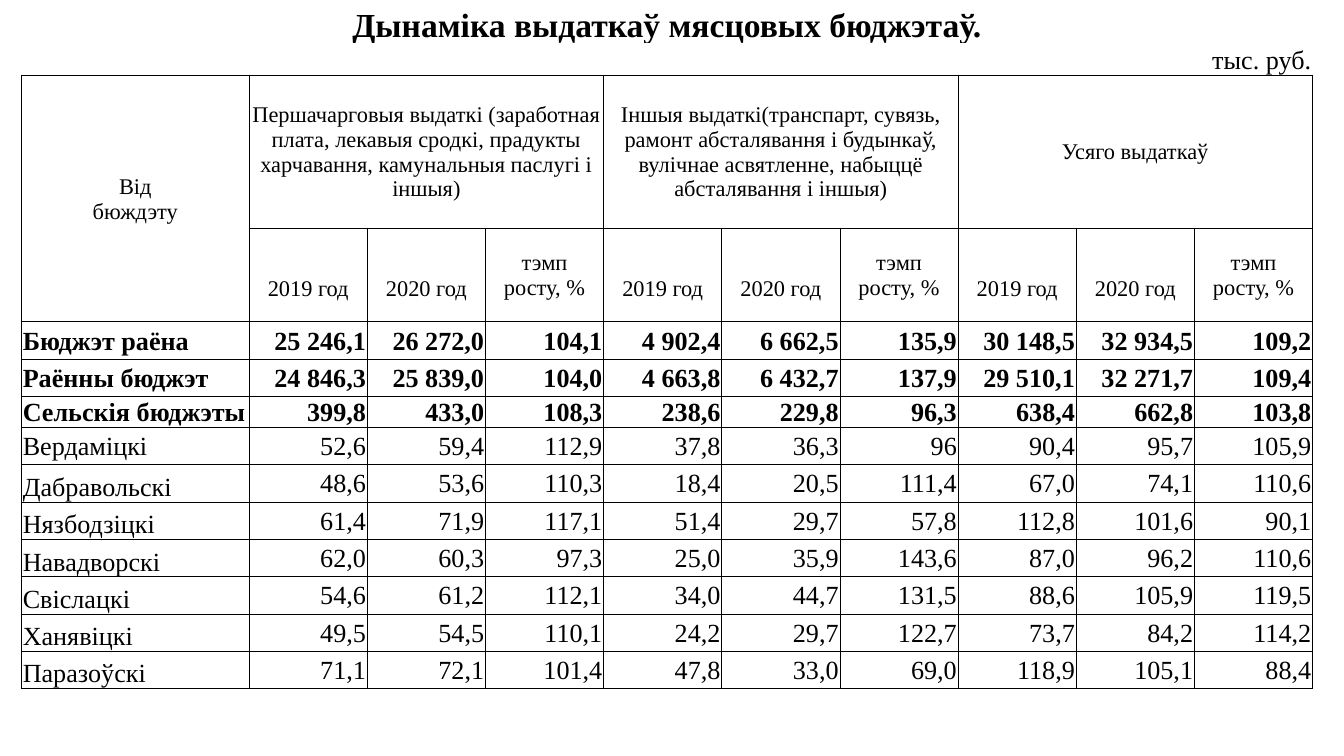
from lxml.etree import SubElement
from pptx import Presentation
from pptx.dml.color import RGBColor
from pptx.enum.text import MSO_ANCHOR, PP_ALIGN
from pptx.oxml.ns import qn
from pptx.util import Pt

INK = "000000"
LEFT, CENTER, RIGHT = PP_ALIGN.LEFT, PP_ALIGN.CENTER, PP_ALIGN.RIGHT

TITLE = "Дынаміка выдаткаў мясцовых бюджэтаў."
UNIT = "тыс. руб."
GROUPS = [
    "Першачарговыя выдаткі (заработная плата, лекавыя сродкі, прадукты "
    "харчавання, камунальныя паслугі і іншыя)",
    "Іншыя выдаткі(транспарт, сувязь, рамонт абсталявання і будынкаў, "
    "вулічнае асвятленне, набыццё абсталявання і іншыя)",
    "Усяго выдаткаў",
]
MEASURES = [["2019 год"], ["2020 год"], ["тэмп", "росту, %"]]
BUDGETS = [
    "Бюджэт раёна|25 246,1|26 272,0|104,1|4 902,4|6 662,5|135,9|30 148,5|32 934,5|109,2",
    "Раённы бюджэт|24 846,3|25 839,0|104,0|4 663,8|6 432,7|137,9|29 510,1|32 271,7|109,4",
    "Сельскія бюджэты|399,8|433,0|108,3|238,6|229,8|96,3|638,4|662,8|103,8",
    "Вердаміцкі|52,6|59,4|112,9|37,8|36,3|96|90,4|95,7|105,9",
    "Дабравольскі|48,6|53,6|110,3|18,4|20,5|111,4|67,0|74,1|110,6",
    "Нязбодзіцкі|61,4|71,9|117,1|51,4|29,7|57,8|112,8|101,6|90,1",
    "Навадворскі|62,0|60,3|97,3|25,0|35,9|143,6|87,0|96,2|110,6",
    "Свіслацкі|54,6|61,2|112,1|34,0|44,7|131,5|88,6|105,9|119,5",
    "Ханявіцкі|49,5|54,5|110,1|24,2|29,7|122,7|73,7|84,2|114,2",
    "Паразоўскі|71,1|72,1|101,4|47,8|33,0|69,0|118,9|105,1|88,4",
]
COLS = [122] + [63.3] * 9
ROWS = [21.5, 16.5, 82, 50.3, 20, 20, 16.6] + [20] * 7
HEADER_ROW, MEASURE_ROW, FIRST_BUDGET = 2, 3, 4


def color(value):
    return RGBColor.from_string(value)


class Deck:
    font = "Times New Roman"
    inset = 0.7

    def __init__(self, width, height):
        self.prs = Presentation()
        self.prs.slide_width, self.prs.slide_height = Pt(width), Pt(height)
        self.s = self.prs.slides.add_slide(self.prs.slide_layouts[6])

    def table(self, left, top, cols, rows):
        sp = self.s.shapes.add_table(len(rows), len(cols), Pt(left), Pt(top),
                                     Pt(sum(cols)), Pt(sum(rows)))
        tbl = sp.table
        tbl.first_row = tbl.horz_banding = False
        for col, width in zip(tbl.columns, cols):
            col.width = Pt(width)
        for row, height in zip(tbl.rows, rows):
            row.height = Pt(height)
        return tbl

    def text(self, cell, lines, size, align, bold=False,
             anchor=MSO_ANCHOR.MIDDLE, top=inset):
        cell.margin_left = cell.margin_right = Pt(self.inset)
        cell.margin_top, cell.margin_bottom = Pt(top), Pt(0)
        cell.vertical_anchor = anchor
        tf = cell.text_frame
        for i, line in enumerate(lines):
            p = tf.add_paragraph() if i else tf.paragraphs[0]
            p.alignment = align
            r = p.add_run()
            r.text = line
            r.font.name, r.font.size, r.font.bold = self.font, Pt(size), bold
            r.font.color.rgb = color(INK)

    def borders(self, cell, sides):
        tcPr = cell._tc.get_or_add_tcPr()
        for side in sides:
            ln = SubElement(tcPr, qn(f"a:ln{side}"), w=str(Pt(0.5)))
            fill = SubElement(ln, qn("a:solidFill"))
            SubElement(fill, qn("a:srgbClr"), val=INK)

    def save(self):
        self.prs.save("out.pptx")


def add_headings(deck, tbl):
    last = len(COLS) - 1
    for row in range(HEADER_ROW):
        tbl.cell(row, 0).merge(tbl.cell(row, last))
    deck.text(tbl.cell(0, 0), [TITLE], 18, CENTER, True, MSO_ANCHOR.BOTTOM)
    deck.text(tbl.cell(1, 0), [UNIT], 14, RIGHT, anchor=MSO_ANCHOR.BOTTOM)

    tbl.cell(HEADER_ROW, 0).merge(tbl.cell(MEASURE_ROW, 0))
    deck.text(tbl.cell(HEADER_ROW, 0), ["Від", "бюждэту"], 12, CENTER)
    for g, group in enumerate(GROUPS):
        first = 1 + g * len(MEASURES)
        cell = tbl.cell(HEADER_ROW, first)
        cell.merge(tbl.cell(HEADER_ROW, first + len(MEASURES) - 1))
        deck.text(cell, [group], 12, CENTER)
        for m, lines in enumerate(MEASURES):
            top = 14.5 if len(lines) == 1 else deck.inset
            deck.text(tbl.cell(MEASURE_ROW, first + m), lines, 12, CENTER, top=top)


def add_budgets(deck, tbl):
    for i, budget in enumerate(BUDGETS):
        for c, value in enumerate(budget.split("|")):
            low = c == 0 and i > 3
            deck.text(tbl.cell(FIRST_BUDGET + i, c), [value], 14,
                      RIGHT if c else LEFT, i < 3,
                      MSO_ANCHOR.BOTTOM if low else MSO_ANCHOR.MIDDLE)


def main():
    deck = Deck(720, 405)
    tbl = deck.table(11.5, 2.2, COLS, ROWS)
    add_headings(deck, tbl)
    add_budgets(deck, tbl)
    for r in range(len(ROWS)):
        for c in range(len(COLS)):
            cell = tbl.cell(r, c)
            deck.borders(cell, "LRTB" if r >= HEADER_ROW else "B" * r)
            cell.fill.background()
    deck.save()


if __name__ == "__main__":
    main()
